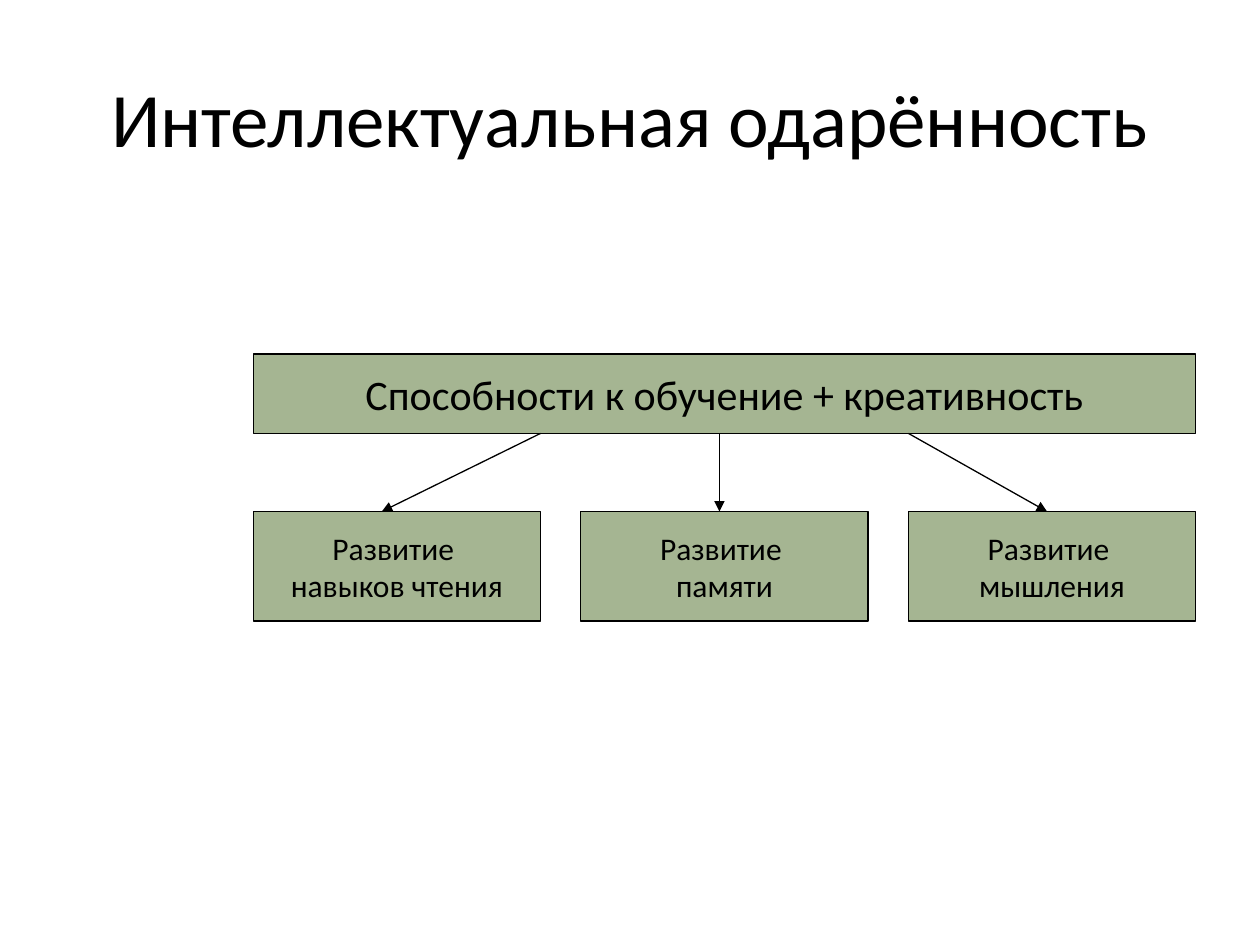
from lxml import etree
from pptx import Presentation
from pptx.dml.color import RGBColor
from pptx.enum.shapes import MSO_CONNECTOR, MSO_SHAPE
from pptx.enum.text import MSO_ANCHOR, PP_ALIGN
from pptx.oxml.ns import qn
from pptx.util import Inches, Pt

RECTANGLE = MSO_SHAPE.RECTANGLE
STRAIGHT = MSO_CONNECTOR.STRAIGHT
MIDDLE = MSO_ANCHOR.MIDDLE
CENTER = PP_ALIGN.CENTER

FONT = "Calibri"
BLACK = "000000"
GREEN = "A5B592"
LINE_WIDTH = Pt(0.75)

HEADING = "Интеллектуальная одарённость"
ABILITIES = "Способности к обучение + креативность"
SKILLS = ["Развитие \nнавыков чтения", "Развитие \nпамяти", "Развитие \nмышления"]


def color(hex_value):
    return RGBColor.from_string(hex_value)


def write_text(frame, text, size):
    frame.text = text
    frame.vertical_anchor = MIDDLE
    for paragraph in frame.paragraphs:
        paragraph.alignment = CENTER
        for run in paragraph.runs:
            run.font.name = FONT
            run.font.size = Pt(size)
            run.font.color.rgb = color(BLACK)


def place_title(slide, left, top, width, height):
    title = slide.shapes.title
    title.left, title.top = Inches(left), Inches(top)
    title.width, title.height = Inches(width), Inches(height)
    write_text(title.text_frame, HEADING, 44)


def add_box(slide, left, top, width, height, text, size):
    box = slide.shapes.add_shape(
        RECTANGLE, Inches(left), Inches(top), Inches(width), Inches(height))
    box.shadow.inherit = False
    box.fill.solid()
    box.fill.fore_color.rgb = color(GREEN)
    box.line.color.rgb = color(BLACK)
    box.line.width = LINE_WIDTH
    write_text(box.text_frame, text, size)
    box.text_frame.word_wrap = False


def add_arrow(slide, start_x, start_y, end_x, end_y):
    arrow = slide.shapes.add_connector(
        STRAIGHT, Inches(start_x), Inches(start_y), Inches(end_x), Inches(end_y))
    arrow.line.color.rgb = color(BLACK)
    arrow.line.width = LINE_WIDTH
    etree.SubElement(arrow.line._get_or_add_ln(), qn("a:tailEnd"), type="triangle")
    etree.SubElement(arrow._element.spPr, qn("a:effectLst"))


def add_diagram(slide, left, top, width, height):
    abilities_height, skill_height, skill_width = 0.63, 0.87, 2.28
    abilities_bottom = top + abilities_height
    skills_top = top + height - skill_height
    step = (width - skill_width) / (len(SKILLS) - 1)

    # Parent box and the row of skills below it
    add_box(slide, left, top, width, abilities_height, ABILITIES, 24)
    for index, skill in enumerate(SKILLS):
        add_box(slide, left + index * step, skills_top,
                skill_width, skill_height, skill, 18)

    # Arrows from the parent box to each skill
    arrow_ends = [
        (left + skill_width, 3.03),
        (5.71, 5.71),
        (left + width - skill_width, 8.31),
    ]
    for start_x, end_x in arrow_ends:
        add_arrow(slide, start_x, abilities_bottom, end_x, skills_top)


def main():
    presentation = Presentation()
    presentation.slide_width = Inches(10)
    presentation.slide_height = Inches(7.5)
    slide = presentation.slides.add_slide(presentation.slide_layouts[5])
    place_title(slide, 0.5, 0.3, 9, 1.25)
    add_diagram(slide, 2.01, 2.81, 7.48, 2.12)
    presentation.save("out.pptx")


if __name__ == "__main__":
    main()
